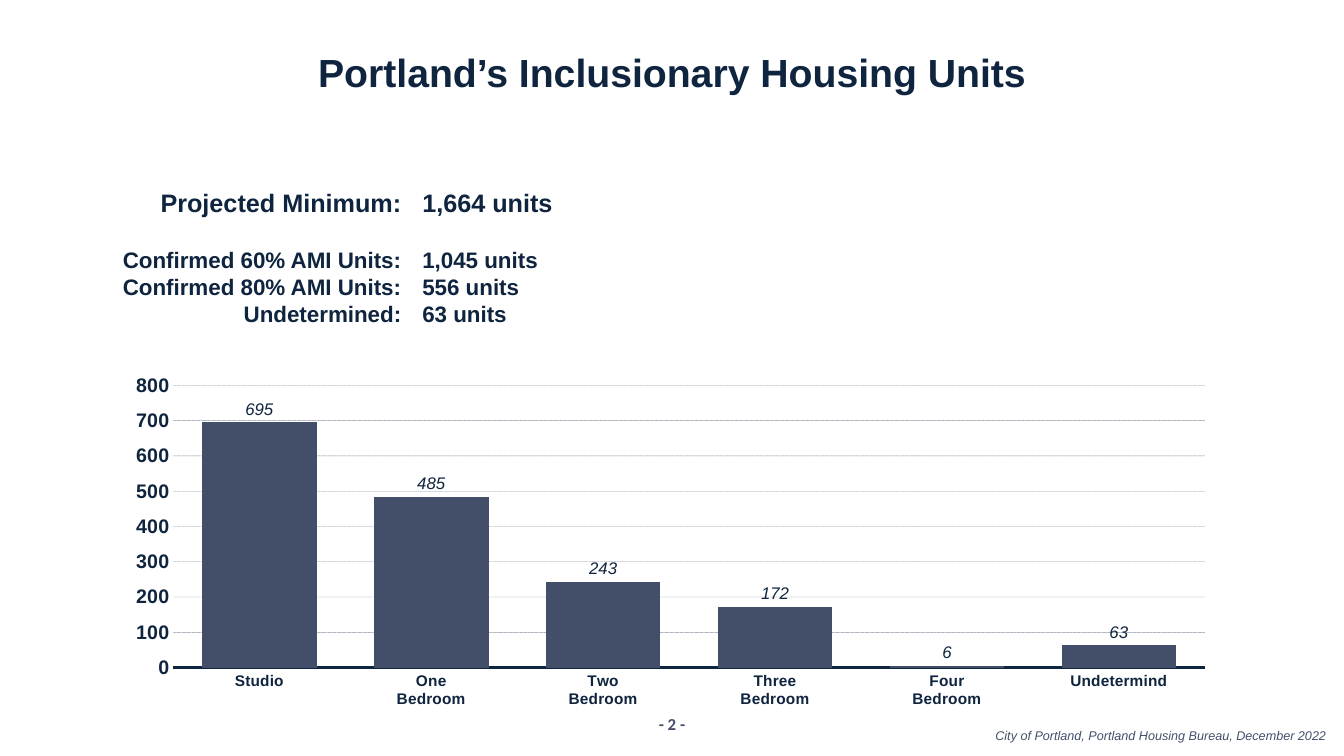
from dataclasses import dataclass

from pptx import Presentation
from pptx.chart.data import CategoryChartData
from pptx.dml.color import RGBColor
from pptx.enum import chart as ch, dml, text
from pptx.oxml import parse_xml
from pptx.oxml.ns import nsdecls, qn
from pptx.util import Inches, Pt

NAVY = RGBColor(0x0F, 0x24, 0x3E)
SLATE = RGBColor(0x43, 0x4F, 0x69)
WHITE = RGBColor(0xFF, 0xFF, 0xFF)
LEFT, CENTER, RIGHT = text.PP_ALIGN.LEFT, text.PP_ALIGN.CENTER, text.PP_ALIGN.RIGHT


@dataclass
class Line:
    words: str
    size: float
    before: float = 0


@dataclass
class TextBlock:
    left: float
    top: float
    width: float
    height: float
    align: text.PP_ALIGN
    lines: list[Line]
    color: RGBColor = NAVY
    font: str = "Arial"
    bold: bool = True
    italic: bool = False
    inset: bool = True


@dataclass
class UnitCount:
    label: str
    count: str
    size: float = 16
    before: float = 0


UNIT_COUNTS = [
    UnitCount("Projected Minimum:", "1,664 units", size=18),
    UnitCount("Confirmed 60% AMI Units:", "1,045 units", before=20.7),
    UnitCount("Confirmed 80% AMI Units:", "556 units"),
    UnitCount("Undetermined:", "63 units"),
]
BEDROOMS = {
    "Studio": 695,
    "One\nBedroom": 485,
    "Two\nBedroom": 243,
    "Three\nBedroom": 172,
    "Four\nBedroom": 6,
    "Undetermind": 63,
}
TITLE = TextBlock(0.75, 0.48, 11.83, 0.47, CENTER,
                  [Line("Portland’s Inclusionary Housing Units", 28)], inset=False)
BLOCKS = [
    TextBlock(0.75, 1.81, 3.33, 1.82, RIGHT,
              [Line(u.label, u.size, u.before) for u in UNIT_COUNTS]),
    TextBlock(4.09, 1.81, 1.5, 1.82, LEFT,
              [Line(u.count, u.size, u.before) for u in UNIT_COUNTS]),
    TextBlock(9.6, 7.17, 3.65, 0.25, RIGHT,
              [Line("City of Portland, Portland Housing Bureau, December 2022", 9)],
              color=SLATE, bold=False, italic=True),
    TextBlock(6.22, 7.08, 0.89, 0.2, CENTER, [Line("- 2 -", 12)],
              color=SLATE, font="Calibri", inset=False),
]


def set_font(font, size: float, color: RGBColor, name: str = "Arial",
             bold: bool = True, italic: bool = False) -> None:
    font.size, font.name = Pt(size), name
    font.bold, font.italic = bold, italic
    font.color.rgb = color


def write_block(sp, block: TextBlock) -> None:
    sp.left, sp.top = Inches(block.left), Inches(block.top)
    sp.width, sp.height = Inches(block.width), Inches(block.height)
    tf = sp.text_frame
    tf.word_wrap = True
    tf.auto_size = text.MSO_AUTO_SIZE.NONE
    tf.vertical_anchor = text.MSO_ANCHOR.TOP
    if not block.inset:
        tf.margin_left = tf.margin_top = tf.margin_right = tf.margin_bottom = 0
    for i, line in enumerate(block.lines):
        p = tf.paragraphs[0] if i == 0 else tf.add_paragraph()
        p.alignment = block.align
        if line.before:
            p.space_before = Pt(line.before)
        r = p.add_run()
        r.text = line.words
        set_font(r.font, line.size, block.color, block.font, block.bold, block.italic)


def fix_plot_area(chart, x: float, y: float, w: float, h: float) -> None:
    """Pin the inner plot area to fractions of the chart frame."""
    plot_area = chart.element.find(".//" + qn("c:plotArea"))
    for old in plot_area.findall(qn("c:layout")):
        plot_area.remove(old)
    sizes = "".join(f'<c:{tag} val="{val}"/>'
                    for tag, val in zip("xywh", (x, y, w, h)))
    plot_area.insert(0, parse_xml(
        f'<c:layout {nsdecls("c")}><c:manualLayout><c:layoutTarget val="inner"/>'
        f'<c:xMode val="edge"/><c:yMode val="edge"/>{sizes}'
        "</c:manualLayout></c:layout>"))


def style_axes(chart) -> None:
    cat, val = chart.category_axis, chart.value_axis
    for axis, size in ((cat, 11), (val, 14)):
        axis.major_tick_mark = axis.minor_tick_mark = ch.XL_TICK_MARK.NONE
        set_font(axis.tick_labels.font, size, NAVY)
    cat.format.line.color.rgb = NAVY
    cat.format.line.width = Pt(2.5)
    val.format.line.fill.background()
    val.minimum_scale, val.maximum_scale, val.major_unit = 0, 800, 100
    val.has_major_gridlines = True
    grid = val.major_gridlines.format.line
    grid.color.rgb = NAVY
    grid.width = Pt(0.25)
    grid.dash_style = dml.MSO_LINE.SQUARE_DOT
    color = chart.element.find(f".//{qn('c:majorGridlines')}//{qn('a:srgbClr')}")
    color.append(parse_xml(f'<a:alpha {nsdecls("a")} val="50000"/>'))


def add_bedroom_chart(s) -> None:
    data = CategoryChartData()
    data.categories = list(BEDROOMS)
    data.add_series("Series 1", list(BEDROOMS.values()))
    chart = s.shapes.add_chart(ch.XL_CHART_TYPE.COLUMN_CLUSTERED, Inches(1.17),
                               Inches(3.65), Inches(11), Inches(3.46), data).chart
    chart.has_title = chart.has_legend = False
    set_font(chart.font, 10, SLATE)
    style_axes(chart)
    fix_plot_area(chart, 0.05, 0.05, 0.93, 0.81)
    plot = chart.plots[0]
    plot.gap_width = 50
    plot.vary_by_categories = False
    series = plot.series[0]
    series.format.fill.solid()
    series.format.fill.fore_color.rgb = SLATE
    labels = series.data_labels
    labels.show_value = True
    labels.position = ch.XL_LABEL_POSITION.OUTSIDE_END
    set_font(labels.font, 12, NAVY, bold=False, italic=True)


def main() -> None:
    prs = Presentation()
    prs.slide_width, prs.slide_height = Inches(13.33), Inches(7.5)
    s = prs.slides.add_slide(prs.slide_layouts[5])
    s.background.fill.solid()
    s.background.fill.fore_color.rgb = WHITE
    add_bedroom_chart(s)
    write_block(s.shapes.title, TITLE)
    for block in BLOCKS:
        sp = s.shapes.add_textbox(0, 0, 0, 0)
        write_block(sp, block)
    prs.save("out.pptx")


if __name__ == "__main__":
    main()
